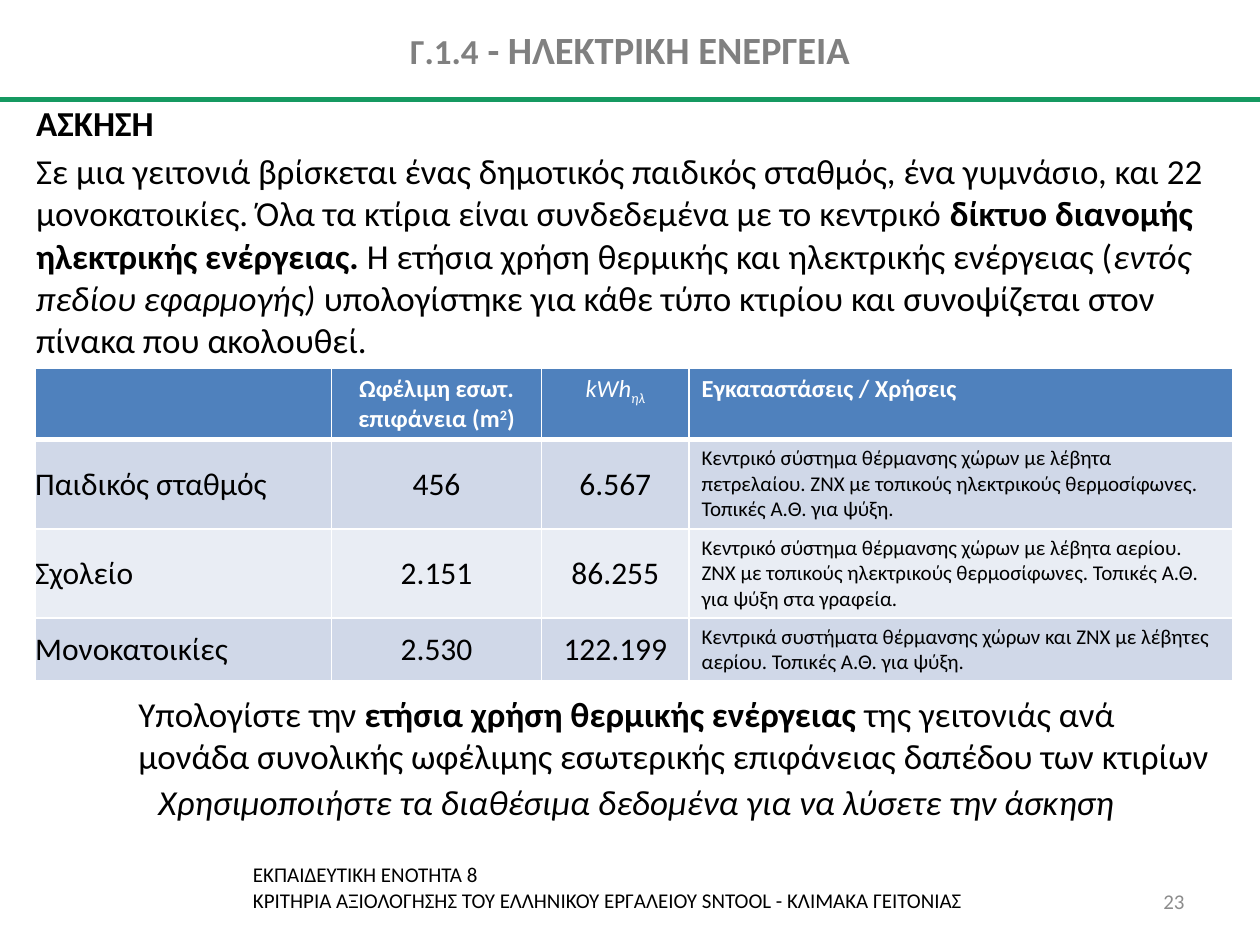
from lxml.etree import SubElement
from pptx import Presentation
from pptx.dml.color import RGBColor
from pptx.enum.shapes import MSO_CONNECTOR
from pptx.enum.text import MSO_ANCHOR, PP_ALIGN
from pptx.oxml.ns import qn
from pptx.util import Cm, Pt

COLORS = {
    "black": "000000", "white": "FFFFFF", "title": "808080", "page": "8C8C8C",
    "rule": "159961", "head": "4F81BD", "odd": "D0D8E8", "even": "E9EDF4",
}
BOLD, ITALIC = {"bold": True}, {"italic": True}
CENTER, RIGHT = PP_ALIGN.CENTER, PP_ALIGN.RIGHT
MIDDLE = MSO_ANCHOR.MIDDLE


def rgb(name):
    return RGBColor.from_string(COLORS[name])


class Deck:
    font = "Calibri"

    def __init__(self):
        self.prs = Presentation()
        self.prs.slide_width, self.prs.slide_height = Cm(25.4), Cm(19.05)
        self.slide = self.prs.slides.add_slide(self.prs.slide_layouts[6])

    def style(self, para, parts, size=20, color="black", align=None, bold=False):
        """Fill a paragraph from a string or from (text, style) pairs."""
        if align is not None:
            para.alignment = align
        if isinstance(parts, str):
            para.text = parts
            pairs = [(run, {}) for run in para.runs]
        else:
            pairs = []
            for text, look in parts:
                run = para.add_run()
                run.text = text
                pairs.append((run, look))
        for run, look in pairs:
            font = run.font
            font.name, font.color.rgb = self.font, rgb(color)
            font.size = Pt(look.get("size", size))
            font.bold = look.get("bold", bold)
            font.italic = look.get("italic", False)
            if "base" in look:
                run._r.get_or_add_rPr().set("baseline", str(look["base"] * 1000))

    def text(self, left, top, width, height, *parts, anchor=MSO_ANCHOR.TOP, **look):
        """Add a text box with one paragraph per part."""
        box = self.slide.shapes.add_textbox(Cm(left), Cm(top), Cm(width), Cm(height))
        frame = box.text_frame
        frame.word_wrap, frame.vertical_anchor = True, anchor
        for i, part in enumerate(parts):
            para = frame.add_paragraph() if i else frame.paragraphs[0]
            self.style(para, part, **look)
        return frame

    def line(self, x1, y1, x2, y2, color, width):
        line = self.slide.shapes.add_connector(
            MSO_CONNECTOR.STRAIGHT, Cm(x1), Cm(y1), Cm(x2), Cm(y2))
        line.line.color.rgb, line.line.width = rgb(color), Pt(width)
        SubElement(line._element.spPr, qn("a:effectLst"))

    def table(self, left, top, cols, rows):
        shape = self.slide.shapes.add_table(
            len(rows), len(cols), Cm(left), Cm(top), Cm(sum(cols)), Cm(sum(rows)))
        table = shape.table
        for col, width in zip(table.columns, cols):
            col.width = Cm(width)
        for row, height in zip(table.rows, rows):
            row.height = Cm(height)
        return table

    def cell(self, cell, fill, top=1, bottom=1):
        """Set white borders (in points) and the fill of a cell."""
        props = cell._tc.get_or_add_tcPr()
        for side, width in (("L", 1), ("R", 1), ("T", top), ("B", bottom)):
            edge = SubElement(props, qn(f"a:ln{side}"), w=str(Pt(width)))
            paint = SubElement(edge, qn("a:solidFill"))
            SubElement(paint, qn("a:srgbClr"), val=COLORS["white"])
        cell.fill.solid()
        cell.fill.fore_color.rgb = rgb(fill)


HEADS = [
    ("", None),
    ([("Ωφέλιμη εσωτ. επιφάνεια (m", {}), ("2", {"base": 30}), (")", {})], CENTER),
    ([("kWh", {"bold": False, "italic": True}),
      ("ηλ", {"bold": False, "italic": True, "base": -25})], CENTER),
    ("Εγκαταστάσεις / Χρήσεις", None),
]
USES = [
    ("Παιδικός σταθμός", "456", "6.567",
     "Κεντρικό σύστημα θέρμανσης χώρων με λέβητα πετρελαίου. ΖΝΧ με τοπικούς "
     "ηλεκτρικούς θερμοσίφωνες. Τοπικές Α.Θ. για ψύξη."),
    ("Σχολείο", "2.151", "86.255",
     "Κεντρικό σύστημα θέρμανσης χώρων με λέβητα αερίου. ΖΝΧ με τοπικούς "
     "ηλεκτρικούς θερμοσίφωνες. Τοπικές Α.Θ. για ψύξη στα γραφεία."),
    ("Μονοκατοικίες", "2.530", "122.199",
     "Κεντρικά συστήματα θέρμανσης χώρων και ΖΝΧ με λέβητες αερίου. "
     "Τοπικές Α.Θ. για ψύξη."),
]


def fill_table(deck):
    table = deck.table(0.71, 7.42, [5.97, 4.24, 2.97, 10.97], [1.42, 1.8, 1.8, 1.27])
    for c, (parts, align) in enumerate(HEADS):
        cell = table.cell(0, c)
        deck.cell(cell, "head", bottom=3)
        deck.style(cell.text_frame.paragraphs[0], parts, 14, "white", align, bold=True)
    for r, row in enumerate(USES, 1):
        for c, text in enumerate(row):
            cell = table.cell(r, c)
            deck.cell(cell, "odd" if r % 2 else "even", top=3 if r == 1 else 1)
            note = c == 3
            if not note:
                cell.margin_left = cell.margin_right = 0
                cell.vertical_anchor = MIDDLE
            deck.style(cell.text_frame.paragraphs[0], text, 12 if note else 18,
                       align=CENTER if c in (1, 2) else None)


def main():
    deck = Deck()
    deck.line(0, 2, 25.4, 2, "rule", 3)
    deck.text(4.85, 17.25, 17.25, 1.27,
              "ΕΚΠΑΙΔΕΥΤΙΚΗ ΕΝΟΤΗΤΑ 8\vΚΡΙΤΗΡΙΑ ΑΞΙΟΛΟΓΗΣΗΣ ΤΟΥ ΕΛΛΗΝΙΚΟΥ "
              "ΕΡΓΑΛΕΙΟΥ SNTOOL - ΚΛΙΜΑΚΑ ΓΕΙΤΟΝΙΑΣ", size=12)
    deck.text(22.43, 17.65, 1.7, 1.02, "23", size=12, color="page",
              align=RIGHT, anchor=MIDDLE)
    deck.text(0, 0, 25.4, 1.98,
              [("Γ.1.4", {"size": 20}), (" - ΗΛΕΚΤΡΙΚΗ ΕΝΕΡΓΕΙΑ", {})],
              size=22, color="title", bold=True, align=CENTER, anchor=MIDDLE)
    body = deck.text(
        0.48, 2.08, 24.71, 5.2,
        [("ΑΣΚΗΣΗ", BOLD)],
        [("Σε μια γειτονιά βρίσκεται ένας δημοτικός παιδικός σταθμός, ένα γυμνάσιο, "
          "και 22 μονοκατοικίες. Όλα τα κτίρια είναι συνδεδεμένα με το κεντρικό", {}),
         (" δίκτυο διανομής ηλεκτρικής ενέργειας. ", BOLD),
         ("Η ετήσια χρήση θερμικής και ηλεκτρικής ενέργειας (", {}),
         ("εντός πεδίου εφαρμογής) ", ITALIC),
         ("υπολογίστηκε για κάθε τύπο κτιρίου και συνοψίζεται στον πίνακα "
          "που ακολουθεί.", {})])
    body.paragraphs[0].line_spacing = 0.8
    body.paragraphs[1].space_before = Pt(4)
    deck.text(0.48, 15.6, 24.71, 1.1,
              [("Χρησιμοποιήστε τα διαθέσιμα δεδομένα για να λύσετε την άσκηση", ITALIC)],
              align=CENTER)
    deck.text(2.54, 13.84, 22.3, 1.35,
              [("Υπολογίστε την ", {}), ("ετήσια χρήση θερμικής ενέργειας ", BOLD),
               ("της γειτονιάς ανά μονάδα συνολικής ωφέλιμης εσωτερικής επιφάνειας "
                "δαπέδου των κτιρίων", {})])
    fill_table(deck)
    deck.prs.save("out.pptx")


if __name__ == "__main__":
    main()
